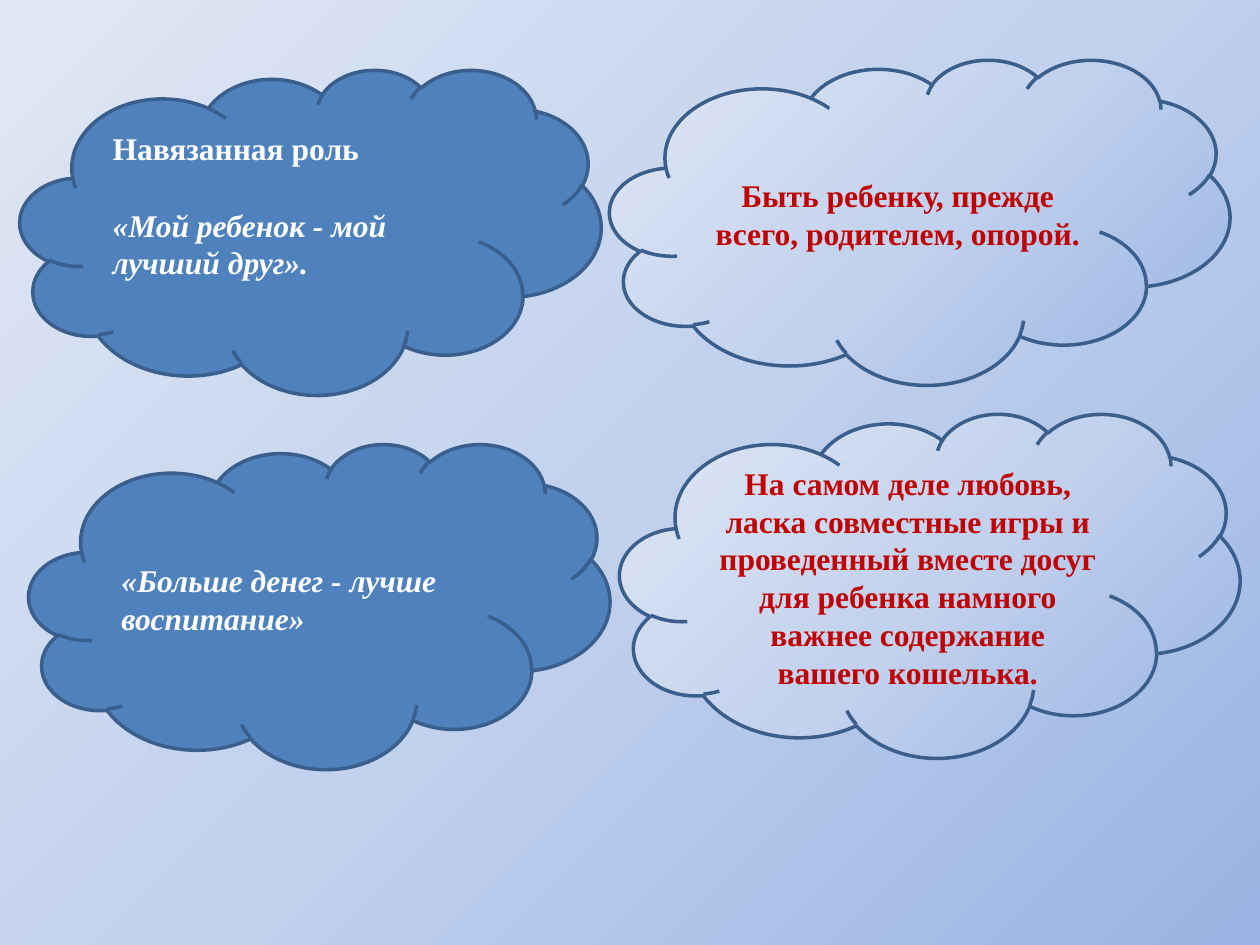
from dataclasses import dataclass

from lxml import etree
from pptx import Presentation, util as u
from pptx.dml.color import RGBColor
from pptx.enum import shapes, text
from pptx.oxml import ns


@dataclass(frozen=True)
class Theme:
    font: str = "Times New Roman"
    size: int = 18
    edge: str = "3A5F8C"
    blue: str = "4F81BD"
    white: str = "FFFFFF"
    red: str = "C00000"
    gap: int = 22
    stops: tuple = ((0, "9AB5E4"), (50, "C2D1ED"), (100, "E1E8F5"))


@dataclass(frozen=True)
class Line:
    words: str
    slant: bool = False


@dataclass(frozen=True)
class Cloud:
    box: tuple
    lines: tuple
    myth: bool = False  # myths are solid blue, answers shaded
    foot: float = 0.05


THEME = Theme()

CLOUDS = (
    Cloud((4.84, 0.47, 4.92, 2.58),
          (Line("Быть ребенку, прежде всего, родителем, опорой."),)),
    Cloud((4.92, 3.28, 4.92, 2.73),
          (Line("На самом деле любовь, ласка совместные игры и проведенный "
                "вместе досуг для ребенка намного важнее содержание "
                "вашего кошелька."),)),
    Cloud((0.16, 0.55, 4.61, 2.58),
          (Line("Навязанная роль"),
           Line("«Мой ребенок - мой лучший друг».", slant=True)),
          myth=True, foot=0.35),
    Cloud((0.23, 3.52, 4.61, 2.58),
          (Line("«Больше денег - лучше воспитание»", slant=True),),
          myth=True),
)


def shade(fill, root) -> None:
    """Give a fill the theme's round gradient, centred bottom right."""
    fill.gradient()
    grad = root.find(".//" + ns.qn("a:gradFill"))
    for part in list(grad):
        grad.remove(part)
    stops = etree.SubElement(grad, ns.qn("a:gsLst"))
    for place, tone in THEME.stops:
        stop = etree.SubElement(stops, ns.qn("a:gs"), pos=str(place * 1000))
        etree.SubElement(stop, ns.qn("a:srgbClr"), val=tone)
    path = etree.SubElement(grad, ns.qn("a:path"), path="circle")
    etree.SubElement(path, ns.qn("a:fillToRect"), l="100000", t="100000")


def write(para, words: str, *, color: str, slant: bool = False,
          align=text.PP_ALIGN.LEFT, before: int = 0) -> None:
    para.alignment = align
    para.space_before = u.Pt(before)
    run = para.add_run()
    run.text = words
    font = run.font
    font.name, font.size = THEME.font, u.Pt(THEME.size)
    font.bold, font.italic = True, slant
    font.color.rgb = RGBColor.from_string(color)


def draw(slide, cloud: Cloud) -> None:
    shape = slide.shapes.add_shape(
        shapes.MSO_SHAPE.CLOUD, *(u.Inches(n) for n in cloud.box))
    shape.shadow.inherit = False
    shape.line.color.rgb = RGBColor.from_string(THEME.edge)
    shape.line.width = u.Pt(2)
    if cloud.myth:
        shape.fill.solid()
        shape.fill.fore_color.rgb = RGBColor.from_string(THEME.blue)
    else:
        shade(shape.fill, shape.element)

    # Text, with a gap between paragraphs
    frame = shape.text_frame
    frame.word_wrap = True
    frame.vertical_anchor = text.MSO_ANCHOR.MIDDLE
    frame.margin_bottom = u.Inches(cloud.foot)
    for i, line in enumerate(cloud.lines):
        para = frame.add_paragraph() if i else frame.paragraphs[0]
        write(para, line.words, slant=line.slant,
              color=THEME.white if cloud.myth else THEME.red,
              align=text.PP_ALIGN.LEFT if cloud.myth else text.PP_ALIGN.CENTER,
              before=THEME.gap if i else 0)


def main() -> None:
    deck = Presentation()
    deck.slide_width, deck.slide_height = u.Inches(10), u.Inches(7.5)
    slide = deck.slides.add_slide(deck.slide_layouts[6])
    # Background
    shade(slide.background.fill, slide.element)
    # Clouds, back to front
    for cloud in CLOUDS:
        draw(slide, cloud)
    deck.save("out.pptx")


if __name__ == "__main__":
    main()
